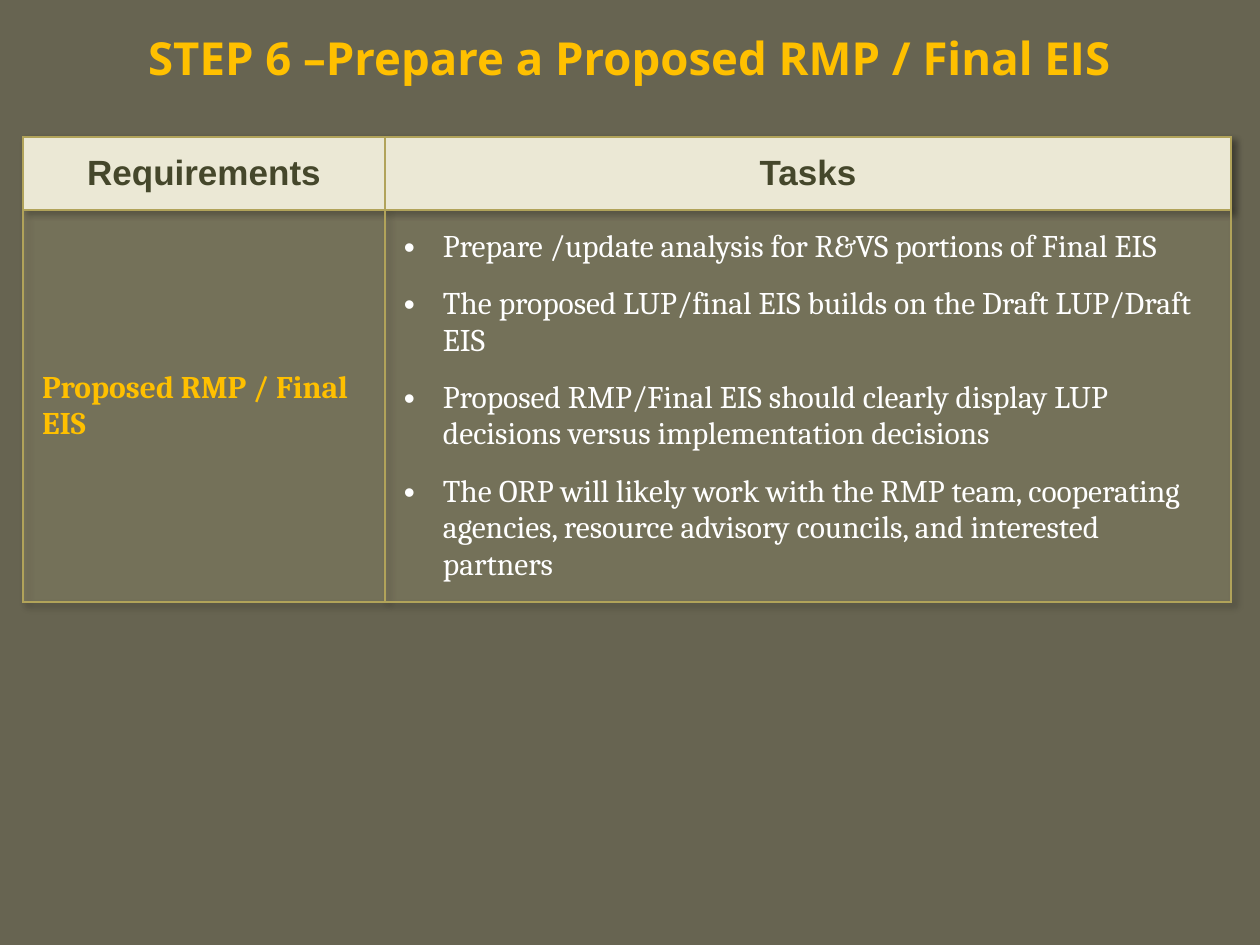
from dataclasses import dataclass
from typing import Optional

from lxml.etree import SubElement
from pptx import Presentation
from pptx.dml.color import RGBColor
from pptx.enum.text import MSO_ANCHOR, PP_ALIGN
from pptx.oxml import parse_xml
from pptx.oxml.ns import nsdecls, qn
from pptx.util import Pt

BACKGROUND = RGBColor(0x67, 0x64, 0x51)
GOLD = RGBColor(0xFF, 0xC0, 0x00)
BORDER = RGBColor(0xB1, 0xA3, 0x5A)
CREAM = RGBColor(0xEB, 0xE8, 0xD5)
OLIVE = RGBColor(0x45, 0x47, 0x2B)
SAND = RGBColor(0xCE, 0xC5, 0x97)
WHITE = RGBColor(0xFF, 0xFF, 0xFF)

PX_PER_INCH = 126
COLUMNS = (362, 846)
ROWS = (73, 392)


def px(n: int) -> int:
    return round(n * 914400 / PX_PER_INCH)


@dataclass(frozen=True)
class CellStyle:
    font: str
    size: int
    color: RGBColor
    fill: RGBColor
    bold: bool = True
    align: PP_ALIGN = PP_ALIGN.LEFT
    opacity: Optional[int] = None
    margin: Optional[int] = None
    bullets: bool = False


@dataclass(frozen=True)
class CellText:
    row: int
    col: int
    lines: tuple[str, ...]
    style: CellStyle


HEADER = CellStyle("Arial", 20, OLIVE, CREAM, align=PP_ALIGN.CENTER)
REQUIREMENT = CellStyle("Cambria", 18, GOLD, SAND, opacity=20, margin=19)
TASK = CellStyle("Cambria", 18, WHITE, SAND, bold=False, opacity=20,
                 margin=19, bullets=True)

CELLS = (
    CellText(0, 0, ("Requirements",), HEADER),
    CellText(0, 1, ("Tasks",), HEADER),
    CellText(1, 0, ("Proposed RMP / Final EIS",), REQUIREMENT),
    CellText(1, 1, (
        "Prepare /update analysis for R&VS portions of Final EIS",
        "The proposed LUP/final EIS builds on the Draft LUP/Draft EIS",
        "Proposed RMP/Final EIS should clearly display LUP decisions "
        "versus implementation decisions",
        "The ORP will likely work with the RMP team, cooperating agencies, "
        "resource advisory councils, and interested partners",
    ), TASK),
)


def style_font(font, name: str, size: int, color: RGBColor, bold: bool) -> None:
    font.name, font.size, font.bold = name, Pt(size), bold
    font.color.rgb = color


def add_bullet(p) -> None:
    pPr = p._p.get_or_add_pPr()
    pPr.set("marL", str(px(39)))
    pPr.set("indent", str(-px(39)))
    SubElement(pPr, qn("a:buFont")).set("typeface", "Arial")
    SubElement(pPr, qn("a:buChar")).set("char", "•")


def add_borders(cell) -> None:
    tcPr = cell._tc.get_or_add_tcPr()
    for i, side in enumerate(("lnL", "lnR", "lnT", "lnB")):
        tcPr.insert(i, parse_xml(
            f'<a:{side} {nsdecls("a")} w="{Pt(1)}"><a:solidFill>'
            f'<a:srgbClr val="{BORDER}"/></a:solidFill></a:{side}>'))


def fill_cell(cell, text: CellText) -> None:
    style = text.style
    cell.vertical_anchor = MSO_ANCHOR.MIDDLE
    if style.margin is not None:
        cell.margin_left = cell.margin_right = px(style.margin)
        cell.margin_top = cell.margin_bottom = px(style.margin)
    cell.fill.solid()
    cell.fill.fore_color.rgb = style.fill
    if style.opacity is not None:
        color = cell._tc.tcPr.find(f".//{qn('a:srgbClr')}")
        SubElement(color, qn("a:alpha")).set("val", str(style.opacity * 1000))
    add_borders(cell)
    tf = cell.text_frame
    tf.text = "\n".join(text.lines)
    for i, p in enumerate(tf.paragraphs):
        p.alignment = style.align
        p.space_before = Pt(6 if i else 0)
        p.space_after = Pt(6)
        if style.bullets:
            add_bullet(p)
        style_font(p.runs[0].font, style.font, style.size, style.color, style.bold)


def add_title(slide, text: str) -> None:
    sp = slide.shapes.title
    sp.left, sp.top, sp.width, sp.height = 0, px(10), px(1260), px(95)
    tf = sp.text_frame
    tf.text = text
    tf.vertical_anchor = MSO_ANCHOR.MIDDLE
    p = tf.paragraphs[0]
    p.alignment = PP_ALIGN.CENTER
    style_font(p.runs[0].font, "Open Sans", 26, GOLD, True)


def add_step_table(slide) -> None:
    frame = slide.shapes.add_table(len(ROWS), len(COLUMNS), px(23), px(137),
                                   px(sum(COLUMNS)), px(sum(ROWS)))
    table = frame.table
    table.horz_banding = False
    for column, width in zip(table.columns, COLUMNS):
        column.width = px(width)
    for row, height in zip(table.rows, ROWS):
        row.height = px(height)
    for text in CELLS:
        fill_cell(table.cell(text.row, text.col), text)
    table._tbl.tblPr.insert(0, parse_xml(
        f'<a:effectLst {nsdecls("a")}><a:outerShdw blurRad="{Pt(4)}" '
        f'dist="{Pt(3)}" dir="2700000" algn="tl" rotWithShape="0">'
        '<a:srgbClr val="000000"><a:alpha val="40000"/></a:srgbClr>'
        '</a:outerShdw></a:effectLst>'))


def main() -> None:
    prs = Presentation()
    prs.slide_width, prs.slide_height = px(1260), px(945)
    slide = prs.slides.add_slide(prs.slide_layouts[5])
    slide.background.fill.solid()
    slide.background.fill.fore_color.rgb = BACKGROUND
    add_title(slide, "STEP 6 –Prepare a Proposed RMP / Final EIS")
    add_step_table(slide)
    prs.save("out.pptx")


if __name__ == "__main__":
    main()
